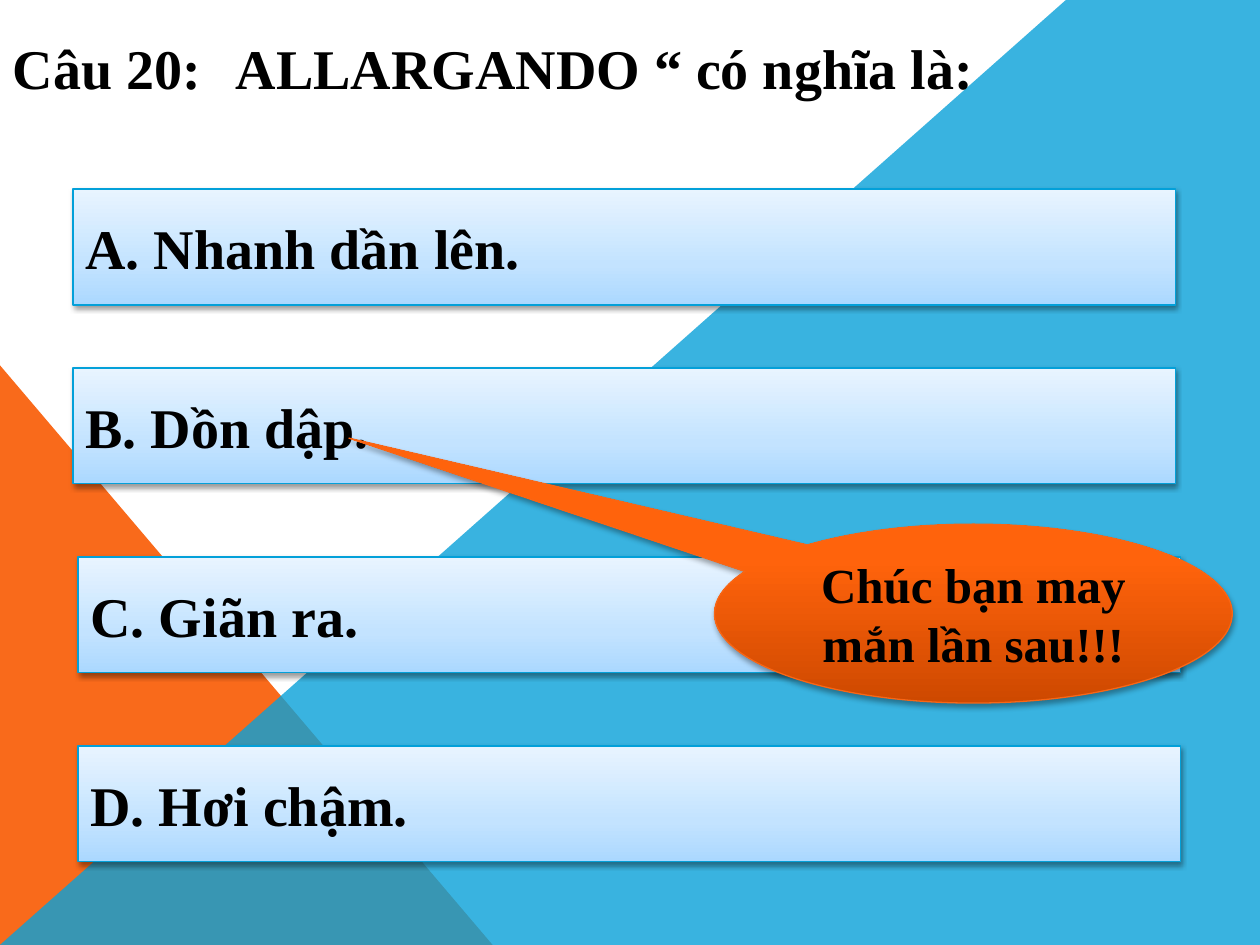
import pptx
import pptx.dml.color
import pptx.enum.shapes
import pptx.enum.text
import pptx.oxml
import pptx.oxml.ns
import pptx.util
from lxml import etree

Inches = pptx.util.Inches
Pt = pptx.util.Pt
qn = pptx.oxml.ns.qn
Shape = pptx.enum.shapes.MSO_SHAPE
Align = pptx.enum.text.PP_ALIGN

FONT = "Times New Roman"
COLORS = {
    "text": "000000",
    "shadow": "000000",
    "orange": "F96A1B",
    "blue": "08A1D9",
    "answer_line": "03A0D9",
    "callout_line": "F96615",
}
# Gradient stops run from the bottom edge to the top edge
ANSWER_STOPS = [(0, "ABD8FF"), (35, "C3E3FF"), (100, "E8F4FF")]
CALLOUT_STOPS = [(0, "CE4900"), (80, "FF630C"), (100, "FF640E")]


def rgb(value):
    return pptx.dml.color.RGBColor.from_string(value)


def add_color(parent, value, alpha=None):
    color = etree.SubElement(parent, qn("a:srgbClr"), val=value)
    if alpha is not None:
        etree.SubElement(color, qn("a:alpha"), val=str(alpha * 1000))


def fill_plain(shape, color, alpha=100):
    shape.shadow.inherit = False
    shape.line.fill.background()
    shape.fill.solid()
    shape.fill.fore_color.rgb = rgb(color)
    if alpha < 100:
        element = shape.element.spPr.find(qn("a:solidFill")).find(qn("a:srgbClr"))
        etree.SubElement(element, qn("a:alpha"), val=str(alpha * 1000))


def style_raised(shape, stops, line_color, shadow_alpha, shadow_distance):
    """Vertical gradient, thin outline and a soft shadow below."""
    shape.fill.gradient()
    shape.fill.gradient_angle = 90
    properties = shape.element.spPr
    stop_list = properties.find(qn("a:gradFill")).find(qn("a:gsLst"))
    for old_stop in list(stop_list):
        stop_list.remove(old_stop)
    for position, color in stops:
        stop = etree.SubElement(stop_list, qn("a:gs"), pos=str(position * 1000))
        add_color(stop, color)

    shape.line.color.rgb = rgb(line_color)
    shape.line.width = Pt(0.75)

    shape.shadow.inherit = False
    shadow = etree.SubElement(
        properties.find(qn("a:effectLst")), qn("a:outerShdw"),
        blurRad=str(Pt(3.1)), dist=str(Pt(shadow_distance)),
        dir="5400000", rotWithShape="0")
    add_color(shadow, COLORS["shadow"], shadow_alpha)


def write_text(shape, text, size, alignment):
    frame = shape.text_frame
    frame.word_wrap = True
    frame.auto_size = pptx.enum.text.MSO_AUTO_SIZE.NONE
    frame.vertical_anchor = pptx.enum.text.MSO_ANCHOR.MIDDLE
    paragraph = frame.paragraphs[0]
    paragraph.alignment = alignment
    run = paragraph.add_run()
    run.text = text
    run.font.name = FONT
    run.font.size = Pt(size)
    run.font.bold = True
    run.font.color.rgb = rgb(COLORS["text"])
    return paragraph


def add_backdrop(slide):
    triangle = slide.shapes.add_shape(
        Shape.RIGHT_TRIANGLE, Inches(0), Inches(2.9), Inches(3.91), Inches(4.6))
    fill_plain(triangle, COLORS["orange"])

    builder = slide.shapes.build_freeform(Inches(0), Inches(7.5))
    corners = [(8.46, 0), (10, 0), (10, 7.5)]
    builder.add_line_segments([(Inches(x), Inches(y)) for x, y in corners], close=True)
    fill_plain(builder.convert_to_shape(), COLORS["blue"], alpha=80)


def add_question(slide, text):
    title = slide.shapes.title
    title.left, title.top = Inches(0), Inches(0)
    title.width, title.height = Inches(10), Inches(1.06)
    paragraph = write_text(title, text, 32, Align.LEFT)
    # Tab stop that separates the number from the term
    tabs = etree.SubElement(paragraph._p.get_or_add_pPr(), qn("a:tabLst"))
    etree.SubElement(tabs, qn("a:tab"), pos=str(Inches(1.77)), algn="l")
    # Bring the title in front of the backdrop
    title.element.getparent().append(title.element)


def add_answer(slide, text, left, top):
    box = slide.shapes.add_shape(
        Shape.RECTANGLE, Inches(left), Inches(top), Inches(8.75), Inches(0.92))
    style_raised(box, ANSWER_STOPS, COLORS["answer_line"], 38, 1.6)
    write_text(box, text, 32, Align.LEFT)


def add_callout(slide, text):
    callout = slide.shapes.add_shape(
        Shape.OVAL_CALLOUT, Inches(5.67), Inches(4.16), Inches(4.11), Inches(1.42))
    callout.adjustments[0] = -1.206
    callout.adjustments[1] = -0.981
    style_raised(callout, CALLOUT_STOPS, COLORS["callout_line"], 35, 1.8)
    write_text(callout, text, 28, Align.CENTER)


def main():
    presentation = pptx.Presentation()
    presentation.slide_width = Inches(10)
    presentation.slide_height = Inches(7.5)
    slide = presentation.slides.add_slide(presentation.slide_layouts[5])

    add_backdrop(slide)
    add_question(slide, "Câu 20:\tALLARGANDO “ có nghĩa là:")

    # Answers
    answers = [
        ("A. Nhanh dần lên.", 0.58, 1.5),
        ("B. Dồn dập.", 0.58, 2.92),
        ("C. Giãn ra.", 0.62, 4.42),
        ("D. Hơi chậm.", 0.62, 5.92),
    ]
    for text, left, top in answers:
        add_answer(slide, text, left, top)

    # Feedback on the wrong answer
    add_callout(slide, "Chúc bạn may mắn lần sau!!!")

    presentation.save("out.pptx")


if __name__ == "__main__":
    main()
